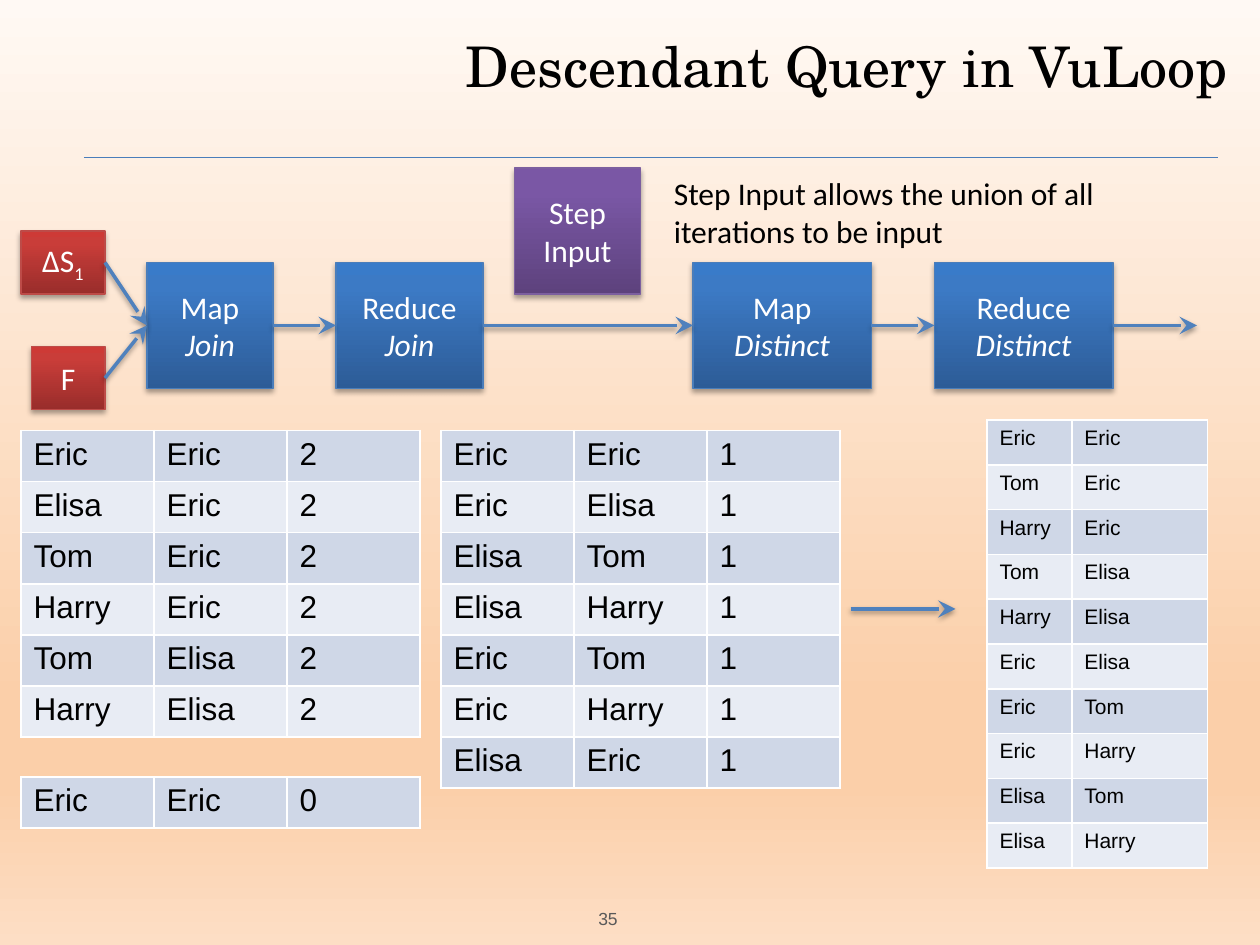
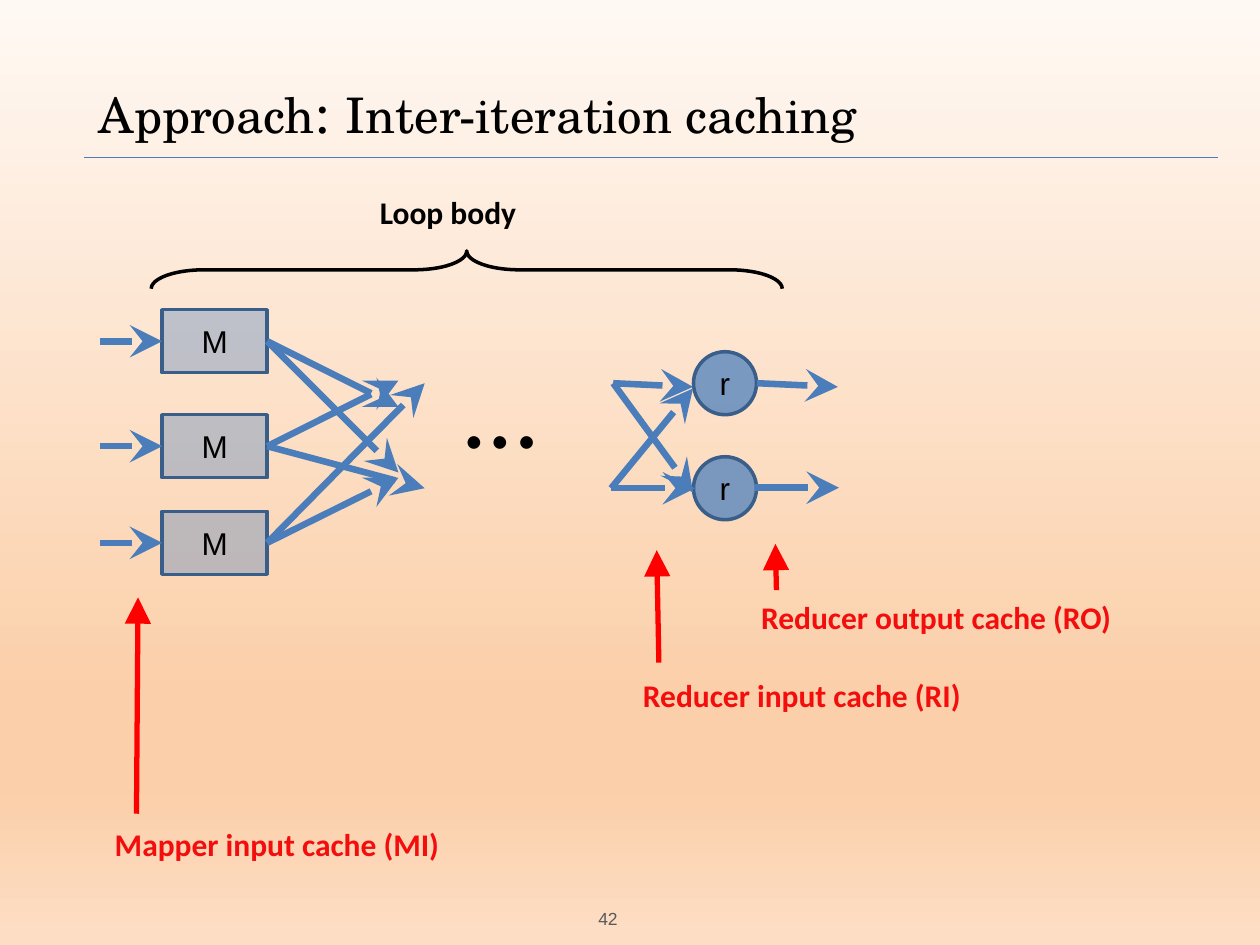
from dataclasses import dataclass

from lxml import etree
from pptx import Presentation
from pptx import util as u
from pptx.dml.color import RGBColor
from pptx.enum import shapes, text
from pptx.oxml.ns import qn

COLUMNS, ROWS = 120, 90
TOP, LEFT, BOTTOM, RIGHT = range(4)
ALIGN = text.PP_ALIGN
ANCHOR = text.MSO_ANCHOR


@dataclass(frozen=True)
class Theme:
    background = ((0, "FFF9F4"), (74, "FBCFA9"), (83, "FBCFA9"), (100, "FDDEC5"))
    blue = ((0, "2D5C97"), (80, "3C7AC5"), (100, "397BC9")), "4A7DBA"
    red = ((0, "992D2B"), (80, "C93D39"), (100, "CD3A36")), "BD4B48"
    purple = ((0, "5D427D"), (80, "7A57A5"), (100, "7A56A7")), "7C5F9F"
    bands = "CFD7E7", "E8ECF4"
    black, white, grey = "000000", "FFFFFF", "595959"
    rule, flow, step = "4A7DBA", "4A7DBA", "4F81BD"
    node, outline = "4F81BD", "395E89"
    pointer, label = "FF0000", "F30D0D"
    title_font, body_font, data_font = "TeX Gyre Schola", "Calibri", "Arial"
    title, subtitle, body, small, footer, dots = 32, 28, 18, 12, 10, 60


THEME = Theme()


def color(value):
    return RGBColor.from_string(value)


def add_child(parent, tag, **attributes):
    child = etree.SubElement(parent, qn(tag))
    for name, value in attributes.items():
        child.set(name, str(value))
    return child


def set_gradient(fill, element, stops, angle):
    fill.gradient()
    fill.gradient_angle = angle
    stop_list = element.find(".//" + qn("a:gsLst"))
    for stop in list(stop_list):
        stop_list.remove(stop)
    for position, value in stops:
        stop = add_child(stop_list, "a:gs", pos=position * 1000)
        add_child(stop, "a:srgbClr", val=value)


def add_shadow(effects, opacity, distance):
    shadow = add_child(effects, "a:outerShdw", blurRad=u.Pt(3.1), dist=u.Pt(distance),
                       dir=5400000, rotWithShape=0)
    tint = add_child(shadow, "a:srgbClr", val=THEME.black)
    add_child(tint, "a:alpha", val=opacity * 1000)


def write(frame, content, size=THEME.body, font=THEME.body_font, ink=THEME.black,
          bold=False, align=ALIGN.LEFT, anchor=ANCHOR.TOP):
    frame.word_wrap = True
    frame.auto_size = text.MSO_AUTO_SIZE.NONE
    frame.vertical_anchor = anchor
    paragraphs = [content] if isinstance(content, str) else content
    for index, runs in enumerate(paragraphs):
        paragraph = frame.paragraphs[0] if index == 0 else frame.add_paragraph()
        paragraph.alignment = align
        for words, extra in [(runs, {})] if isinstance(runs, str) else runs:
            run = paragraph.add_run()
            run.text = words
            run.font.name = font
            run.font.size = u.Pt(extra.get("size", size))
            run.font.color.rgb = color(ink)
            run.font.bold = bold
            run.font.italic = extra.get("italic", False)
            if "baseline" in extra:
                run._r.get_or_add_rPr().set("baseline", str(extra["baseline"] * 1000))


class Deck:
    def __init__(self, theme):
        self.theme = theme
        self.presentation = Presentation()
        self.presentation.slide_width = u.Inches(10)
        self.presentation.slide_height = u.Inches(7.5)
        self.slide = None
        master = self.presentation.slide_master
        set_gradient(master.background.fill, master.element, theme.background, 270)

    def x(self, columns):
        return round(self.presentation.slide_width * columns / COLUMNS)

    def y(self, rows):
        return round(self.presentation.slide_height * rows / ROWS)

    def area(self, left, top, width, height):
        return self.x(left), self.y(top), self.x(width), self.y(height)

    def start(self, title, number, left, top, align=ALIGN.LEFT, size=None):
        self.slide = self.presentation.slides.add_slide(self.presentation.slide_layouts[5])
        heading = self.slide.shapes.title
        heading.left, heading.top, heading.width, heading.height = self.area(left, top, 102, 8.4)
        write(heading.text_frame, title, size=size or self.theme.title,
              font=self.theme.title_font, align=align)
        self.label(str(number), 43.9, 84.9, 28, 5.1, size=self.theme.footer,
                   font=self.theme.data_font, ink=self.theme.grey,
                   align=ALIGN.CENTER, anchor=ANCHOR.MIDDLE)
        self.line((8, 15), (116, 15), self.theme.rule, 0.75)

    def label(self, content, left, top, width, height, **style):
        box = self.slide.shapes.add_textbox(*self.area(left, top, width, height))
        write(box.text_frame, content, **style)

    def shape(self, kind, left, top, width, height, outline, weight):
        shape = self.slide.shapes.add_shape(kind, *self.area(left, top, width, height))
        shape.shadow.inherit = False
        shape.line.color.rgb = color(outline)
        shape.line.width = u.Pt(weight)
        return shape

    def box(self, content, left, top, width, height, palette):
        stops, outline = palette
        box = self.shape(shapes.MSO_SHAPE.RECTANGLE, left, top, width, height, outline, 0.75)
        set_gradient(box.fill, box._element.spPr, stops, 90)
        add_shadow(box._element.spPr.find(qn("a:effectLst")), 35, 1.8)
        write(box.text_frame, content, ink=self.theme.white,
              align=ALIGN.CENTER, anchor=ANCHOR.MIDDLE)
        return box

    def node(self, content, kind, left, top, width, height, opacity):
        node = self.shape(kind, left, top, width, height, self.theme.outline, 2)
        node.fill.solid()
        node.fill.fore_color.rgb = color(self.theme.node)
        tint = node._element.spPr.find(qn("a:solidFill")).find(qn("a:srgbClr"))
        add_child(tint, "a:alpha", val=opacity * 1000)
        write(node.text_frame, content, font=self.theme.data_font,
              align=ALIGN.CENTER, anchor=ANCHOR.MIDDLE)
        return node

    def brace(self, left, top, width, height):
        middle_x, middle_y = left + width / 2, top + height / 2
        brace = self.shape(shapes.MSO_SHAPE.LEFT_BRACE, middle_x - height / 2,
                           middle_y - width / 2, height, width, self.theme.black, 2)
        brace.fill.background()
        brace.rotation = 90
        brace.adjustments[0], brace.adjustments[1] = 1.39, 0.5

    def line(self, start, end, ink, weight, head=None, shadow=False):
        ends = [point if isinstance(point, tuple) else (0, 0) for point in (start, end)]
        places = [place for column, row in ends for place in (self.x(column), self.y(row))]
        connector = self.slide.shapes.add_connector(shapes.MSO_CONNECTOR.STRAIGHT, *places)
        if not isinstance(start, tuple):
            connector.begin_connect(start, RIGHT)
        if not isinstance(end, tuple):
            connector.end_connect(end, LEFT)
        connector.line.color.rgb = color(ink)
        connector.line.width = u.Pt(weight)
        properties = connector._element.spPr
        if head:
            add_child(properties.find(qn("a:ln")), "a:tailEnd", type=head, w="lg", len="lg")
        effects = add_child(properties, "a:effectLst")
        if shadow:
            add_shadow(effects, 38, 1.6)

    def step(self, start, end):
        self.line(start, end, self.theme.step, 2, "stealth", shadow=True)

    def flow(self, start, end):
        self.line(start, end, self.theme.flow, 3.75, "stealth")

    def pointer(self, start, end):
        self.line(start, end, self.theme.pointer, 3, "triangle")

    def table(self, records, left, top, widths, row_height, size):
        rows = [record.split() for record in records]
        frame = self.slide.shapes.add_table(
            len(rows), len(widths),
            *self.area(left, top, sum(widths), row_height * len(rows)))
        table = frame.table
        table.first_row = table.horz_banding = False
        for column, width in zip(table.columns, widths):
            column.width = self.x(width)
        for index, values in enumerate(rows):
            table.rows[index].height = self.y(row_height)
            for cell, value in zip(table.rows[index].cells, values):
                cell.fill.solid()
                cell.fill.fore_color.rgb = color(self.theme.bands[index % 2])
                write_cell(cell, value, size)


def write_cell(cell, value, size):
    paragraph = cell.text_frame.paragraphs[0]
    run = paragraph.add_run()
    run.text = value
    run.font.name = THEME.data_font
    run.font.size = u.Pt(size)
    run.font.color.rgb = color(THEME.black)


def descendant_query(deck):
    theme = deck.theme
    deck.start("Descendant Query in VuLoop", 35, 16.2, 2.4, align=ALIGN.RIGHT)

    stages = []
    for name, phase, left, width in (("Map", "Join", 14, 12), ("Reduce", "Join", 32, 14),
                                     ("Map", "Distinct", 66, 17), ("Reduce", "Distinct", 89, 17)):
        content = [name, [(phase, {"italic": True})]]
        stages.append(deck.box(content, left, 25, width, 12, theme.blue))
    delta = deck.box([[("∆S", {}), ("1", {"baseline": -25})]], 2, 22, 8, 6, theme.red)
    friends = deck.box("F", 3, 33, 7, 6, theme.red)
    deck.box("Step Input", 49, 16, 12, 12, theme.purple)

    for source in (delta, friends):
        deck.step(source, stages[0])
    for source, target in zip(stages, stages[1:] + [(114, 31)]):
        deck.step(source, target)
    deck.step((81, 58), (91, 58))

    triple = (12.67,) * 3
    second = ["Eric Eric 2", "Elisa Eric 2", "Tom Eric 2", "Harry Eric 2",
              "Tom Elisa 2", "Harry Elisa 2"]
    first = ["Eric Eric 1", "Eric Elisa 1", "Elisa Tom 1", "Elisa Harry 1",
             "Eric Tom 1", "Eric Harry 1", "Elisa Eric 1"]
    union = ["Eric Eric", "Tom Eric", "Harry Eric", "Tom Elisa", "Harry Elisa",
             "Eric Elisa", "Eric Tom", "Eric Harry", "Elisa Tom", "Elisa Harry"]
    for records, left, top in ((second, 2, 41), (first, 42, 41), (["Eric Eric 0"], 2, 74)):
        deck.table(records, left, top, triple, 4.87, theme.body)
    deck.table(union, 94, 40, (8.08, 12.92), 4.27, theme.small)

    deck.label("Step Input allows the union of all iterations to be input", 63, 16, 53, 8.5)


def caching_approach(deck):
    theme = deck.theme
    title = [[("Approach", {}), (": ", {"size": theme.title}), ("Inter-iteration caching", {})]]
    deck.start(title, 42, 8.2, 6.8, size=theme.subtitle)

    deck.label("Loop body", 35, 17.75, 24.7, 6, bold=True)
    deck.brace(14.4, 23.9, 60.1, 3.6)

    mappers = [deck.node("M", shapes.MSO_SHAPE.FLOWCHART_PROCESS, 15.45, top, 10, 6, 36)
               for top in (29.5, 39.5, 48.7)]
    shuffles = (((37.95, 38.75), (37.95, 45)), ((40.45, 46.5), (37.95, 36.25)),
                ((40.45, 36.5), (37.95, 45.5)))
    for mapper, row, targets in zip(mappers, (32.5, 42.5, 51.7), shuffles):
        deck.flow((9.5, row), mapper)
        for target in targets:
            deck.flow(mapper, target)

    deck.label("…", 43.1, 32.1, 13.9, 13.2, size=theme.dots)

    for top in (33.5, 43.5):
        deck.node("r", shapes.MSO_SHAPE.FLOWCHART_CONNECTOR, 66.05, top, 6, 6, 75)
    upper, lower = (58.4, 36.5), (58.2, 46.5)
    for start, end in ((upper, (66, 36.85)), (lower, (66.2, 46.5)),
                       (upper, (66, 46.9)), (lower, (66, 37)),
                       ((72.1, 36.5), (79.8, 36.85)), ((71.9, 46.45), (79.9, 46.45))):
        deck.flow(start, end)

    for name, left, top, width, start, end in (
            ("Mapper input cache (MI)", 9.75, 78, 49.4, (13, 77.5), (13.15, 56.9)),
            ("Reducer input cache (RI)", 60.05, 63.8, 45.5, (62.75, 63.1), (62.55, 52.4)),
            ("Reducer output cache (RO)", 71.3, 56.4, 43.3, (73.95, 56.2), (73.85, 51.8))):
        deck.label(name, left, top, width, 4.8, ink=theme.label, bold=True)
        deck.pointer(start, end)


def main():
    deck = Deck(THEME)
    descendant_query(deck)
    caching_approach(deck)
    deck.presentation.save("out.pptx")


if __name__ == "__main__":
    main()
